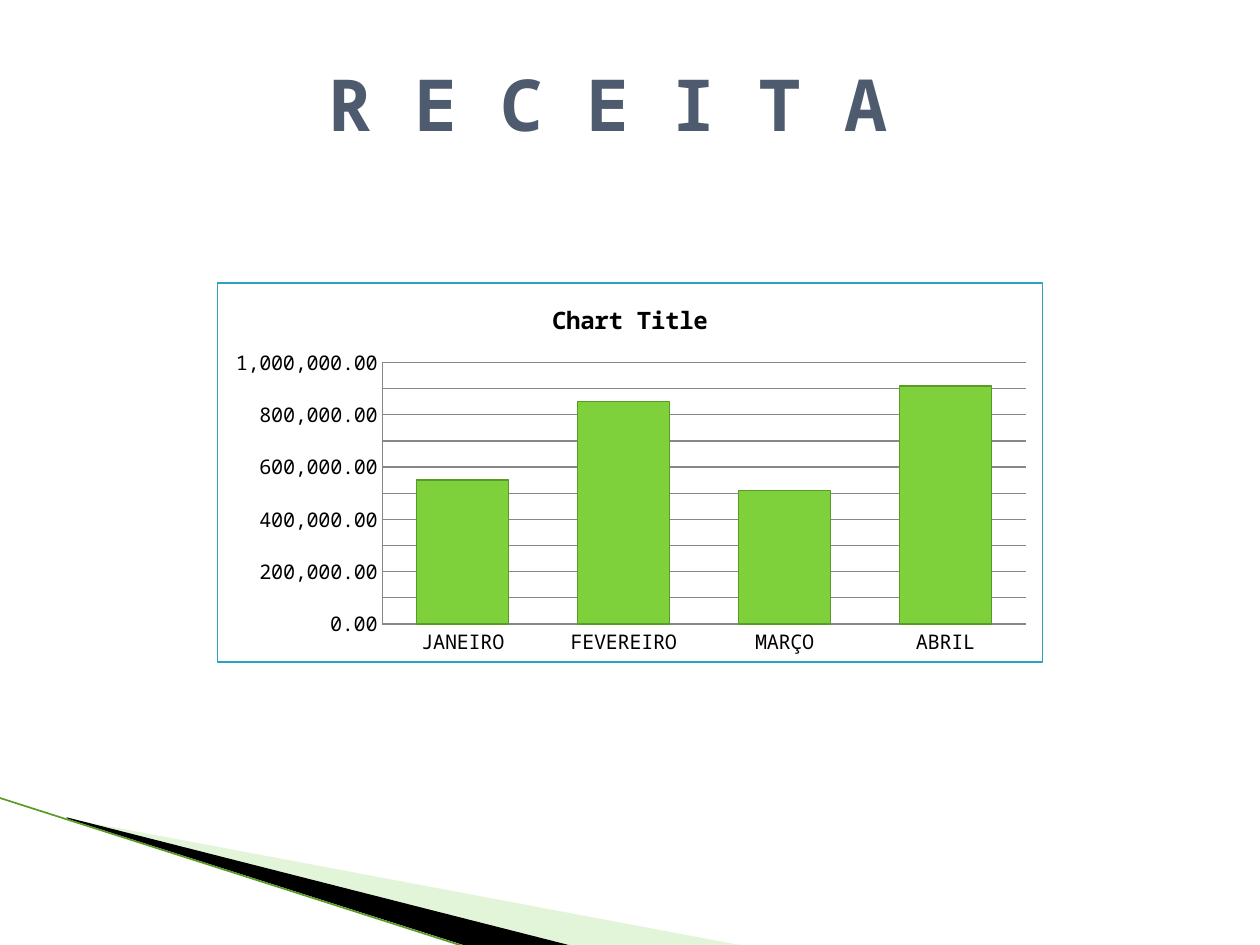
from copy import deepcopy

from lxml import etree
from pptx import Presentation
from pptx import util as u
from pptx.chart.data import CategoryChartData
from pptx.dml.color import RGBColor
from pptx.enum import chart as ch, shapes, text
from pptx.oxml import parse_xml
from pptx.oxml.ns import nsdecls, qn

Pt = u.Pt
FONT = "Noto Sans Mono"
SLATE = RGBColor(0x4E, 0x5B, 0x6F)
BLACK = RGBColor(0, 0, 0)
GREEN = RGBColor(0x7F, 0xD1, 0x3B)
DARK_GREEN = RGBColor(0x5A, 0x9A, 0x26)
PALE_GREEN = RGBColor(0xB8, 0xE7, 0xA1)
GRAY = RGBColor(0x87, 0x87, 0x87)
TEAL = RGBColor(0x2D, 0xA2, 0xBF)


def set_font(font, size, color, bold=False):
    font.name = FONT
    font.size = Pt(size)
    font.bold = bold
    font.color.rgb = color


def add_wedge(s, points, color, opacity=100):
    fb = s.shapes.build_freeform(*points[0], scale=Pt(1))
    fb.add_line_segments(points[1:], close=True)
    sp = fb.convert_to_shape()
    sp.shadow.inherit = False
    sp.fill.solid()
    sp.fill.fore_color.rgb = color
    sp.line.fill.background()
    if opacity < 100:
        clr = sp._element.spPr.find(f".//{qn('a:srgbClr')}")
        etree.SubElement(clr, qn("a:alpha"), val=str(opacity * 1000))


def add_edge_line(s, start, end):
    ln = s.shapes.add_connector(shapes.MSO_CONNECTOR.STRAIGHT,
                                *map(Pt, start + end))
    ln.line.color.rgb = DARK_GREEN
    ln.line.width = Pt(0.95)
    etree.SubElement(ln._element.spPr, qn("a:effectLst"))


def set_title(s, words):
    sp = s.shapes.title
    sp.left, sp.top, sp.width, sp.height = map(Pt, (36, 21.6, 648, 74.2))
    tf = sp.text_frame
    tf.text = words
    tf.vertical_anchor = text.MSO_ANCHOR.MIDDLE
    p = tf.paragraphs[0]
    p.alignment = text.PP_ALIGN.CENTER
    set_font(p.font, 41, SLATE, bold=True)


def frame_chart(chart):
    """Outline the chart area and fix the inner plot area."""
    chart._chartSpace.find(qn("c:chart")).addnext(parse_xml(
        f'<c:spPr {nsdecls("c", "a")}><a:noFill/><a:ln w="{Pt(0.75)}">'
        f'<a:solidFill><a:srgbClr val="{TEAL}"/></a:solidFill></a:ln></c:spPr>'))
    plot_area = chart._chartSpace.find(f".//{qn('c:plotArea')}")
    for old in plot_area.findall(qn("c:layout")):
        plot_area.remove(old)
    spots = "".join(f'<c:{k} val="{v}"/>' for k, v in (
        ("layoutTarget", "inner"), ("xMode", "edge"), ("yMode", "edge"),
        ("x", 0.2), ("y", 0.21), ("w", 0.78), ("h", 0.69)))
    plot_area.insert(0, parse_xml(
        f'<c:layout {nsdecls("c")}><c:manualLayout>{spots}'
        '</c:manualLayout></c:layout>'))


def style_axes(chart):
    cat, val = chart.category_axis, chart.value_axis
    for axis in (cat, val):
        axis.major_tick_mark = axis.minor_tick_mark = ch.XL_TICK_MARK.NONE
        axis.format.line.color.rgb = GRAY
    val.minimum_scale, val.maximum_scale = 0, 1000000
    val.major_unit, val.minor_unit = 200000, 100000
    val.has_major_gridlines = val.has_minor_gridlines = True
    grid = val.major_gridlines.format.line
    grid.color.rgb = GRAY
    grid.width = Pt(0.75)
    major, minor = (val._element.find(qn(f"c:{kind}Gridlines"))
                    for kind in ("major", "minor"))
    minor.append(deepcopy(major.find(qn("c:spPr"))))
    val.tick_labels.number_format = "#,##0.00"
    val.tick_labels.number_format_is_linked = False


def add_revenue_chart(s):
    data = CategoryChartData(number_format="#,##0.00")
    data.categories = ["JANEIRO", "FEVEREIRO", "MARÇO", "ABRIL"]
    data.add_series("Series 1", [550000, 850000, 510000, 910000])
    chart = s.shapes.add_chart(ch.XL_CHART_TYPE.COLUMN_CLUSTERED,
                               Pt(123.8), Pt(161.3), Pt(472.3), Pt(217.4),
                               data).chart
    set_font(chart.font, 11.5, BLACK)
    chart.has_legend = False
    chart.has_title = True
    tf = chart.chart_title.text_frame
    tf.text = "Chart Title"
    set_font(tf.paragraphs[0].font, 13.8, BLACK, bold=True)
    plot = chart.plots[0]
    plot.gap_width = 75
    plot.vary_by_categories = False
    bars = plot.series[0].format
    bars.fill.solid()
    bars.fill.fore_color.rgb = GREEN
    bars.line.color.rgb = DARK_GREEN
    bars.line.width = Pt(0.75)
    style_axes(chart)
    frame_chart(chart)


def main():
    prs = Presentation()
    prs.slide_width, prs.slide_height = Pt(720), Pt(540)
    s = prs.slides.add_slide(prs.slide_layouts[5])
    add_wedge(s, [(39.6, 468.4), (428.4, 540.7), (328.3, 540.7), (39.6, 468)],
              PALE_GREEN, opacity=40)
    add_wedge(s, [(38.2, 467.3), (329, 540.7), (267.8, 541.4), (38.9, 468)],
              BLACK)
    add_edge_line(s, (-0.7, 455.8), (267.1, 541.4))
    set_title(s, "R E C E I T A ")
    add_revenue_chart(s)
    prs.save("out.pptx")


if __name__ == "__main__":
    main()
